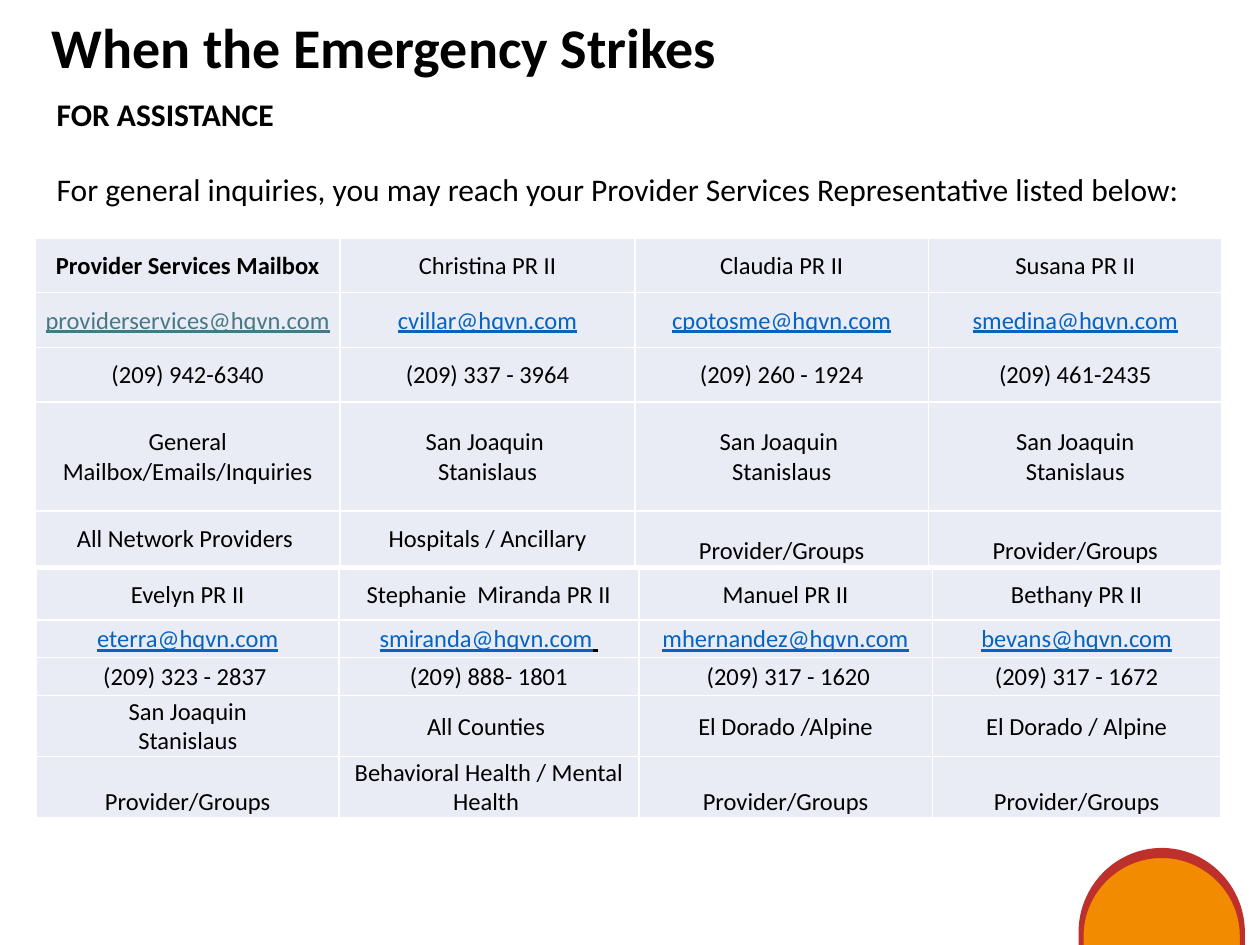
from lxml.etree import SubElement
from pptx import Presentation
from pptx.dml.color import RGBColor
from pptx.enum.text import MSO_ANCHOR, MSO_AUTO_SIZE, PP_ALIGN
from pptx.oxml.ns import qn
from pptx.util import Inches, Pt

BLACK, WHITE, CELL = "000000", "FFFFFF", "E9EBF5"
LINK, MAIL = "0563C1", "467886"

TOP = [
    ["Provider Services Mailbox", "Christina PR II", "Claudia PR II", "Susana PR II"],
    ["providerservices@hqvn.com", "cvillar@hqvn.com", "cpotosme@hqvn.com",
     "smedina@hqvn.com"],
    ["(209) 942-6340", "(209) 337 - 3964", "(209) 260 - 1924", "(209) 461-2435"],
    ["General Mailbox/Emails/Inquiries", "San Joaquin \nStanislaus",
     "San Joaquin \nStanislaus", "San Joaquin\nStanislaus"],
    ["All Network Providers ", "Hospitals / Ancillary", "Provider/Groups",
     "Provider/Groups"],
]
LOW = [
    ["Evelyn PR II", "Stephanie  Miranda PR II", "Manuel PR II", "Bethany PR II"],
    ["eterra@hqvn.com", "smiranda@hqvn.com ", "mhernandez@hqvn.com",
     "bevans@hqvn.com"],
    ["(209) 323 - 2837 ", "(209) 888- 1801", " (209) 317 - 1620", "(209) 317 - 1672"],
    ["San Joaquin\nStanislaus", "All Counties ", "El Dorado /Alpine",
     "El Dorado / Alpine"],
    ["Provider/Groups", "Behavioral Health / Mental Health ", "Provider/Groups",
     "Provider/Groups"],
]


def color(code):
    return RGBColor.from_string(code)


def add_run(para, text, size, bold=False, tint=BLACK, under=False):
    run = para.add_run()
    run.text = text
    font = run.font
    font.name, font.size = "Calibri", Pt(size)
    font.bold, font.underline = bold, under
    font.color.rgb = color(tint)


def set_box(holder, box, lines, size, space, after):
    holder.left, holder.top, holder.width, holder.height = map(Inches, box)
    frame = holder.text_frame
    frame.word_wrap = True
    frame.auto_size = MSO_AUTO_SIZE.NONE
    frame.vertical_anchor = MSO_ANCHOR.TOP
    for i, (text, bold) in enumerate(lines):
        para = frame.add_paragraph() if i else frame.paragraphs[0]
        props = para._p.get_or_add_pPr()
        props.set("marL", "0")
        props.set("indent", "0")
        SubElement(props, qn("a:buNone"))
        para.alignment = PP_ALIGN.LEFT
        para.line_spacing = space
        para.space_before = Pt(12 if i else 0)
        para.space_after = Pt(after)
        add_run(para, text, size, bold)


def add_edges(cell):
    props = cell._tc.get_or_add_tcPr()
    for side in ("a:lnL", "a:lnR", "a:lnT", "a:lnB"):
        line = SubElement(props, qn(side), w=str(Pt(1)))
        fill = SubElement(line, qn("a:solidFill"))
        SubElement(fill, qn("a:srgbClr"), val=WHITE)


def fill_cell(cell, text, bold, anchor):
    add_edges(cell)
    cell.fill.solid()
    cell.fill.fore_color.rgb = color(CELL)
    cell.margin_left = cell.margin_right = cell.margin_top = Inches(0.01)
    cell.margin_bottom = 0
    cell.vertical_anchor = anchor
    para = cell.text_frame.paragraphs[0]
    para.alignment = PP_ALIGN.CENTER
    if "@" in text:
        link, gap, _ = text.partition(" ")
        tint = MAIL if link.startswith("provider") else LINK
        add_run(para, link, 14, tint=tint, under=True)
        if gap:
            add_run(para, gap, 14, under=True)
        return
    for i, part in enumerate(text.split("\n")):
        if i:
            para.add_line_break()
        add_run(para, part, 14, bold)


def add_grid(slide, left, top, wide, high, data, drop):
    frame = slide.shapes.add_table(len(high), len(wide), Inches(left), Inches(top),
                                   Inches(sum(wide)), Inches(sum(high)))
    table = frame.table
    table.first_row = table.horz_banding = False
    for col, size in zip(table.columns, wide):
        col.width = Inches(size)
    for row, size in zip(table.rows, high):
        row.height = Inches(size)
    for r, texts in enumerate(data):
        for c, text in enumerate(texts):
            base = r == len(data) - 1 and c >= drop
            anchor = MSO_ANCHOR.BOTTOM if base else MSO_ANCHOR.MIDDLE
            fill_cell(table.cell(r, c), text, "Mailbox" in text and r == 0, anchor)


def dome(y, wide, high, way=1):
    x, bend = 9.22, 0.55
    run = wide * way
    return [
        [(x - run, 7.5)],
        [(x - run, y)],
        [(x - run, y - bend * high), (x - bend * run, y - high), (x, y - high)],
        [(x + bend * run, y - high), (x + run, y - bend * high), (x + run, y)],
        [(x + run, 7.5)],
    ]


def add_form(slide, steps, tint):
    ends = [(Inches(x), Inches(y)) for x, y in (step[-1] for step in steps)]
    form = slide.shapes.build_freeform(*ends[0], scale=1.0)
    form.add_line_segments(ends[1:], close=True)
    shape = form.convert_to_shape()
    lines = list(shape._element.iter(qn("a:lnTo")))
    for line, step in zip(lines, steps[1:]):
        if len(step) == 3:
            line.tag = qn("a:cubicBezTo")
            for i, (x, y) in enumerate(step[:2]):
                spot = SubElement(line, qn("a:pt"), x=str(Inches(x) - shape.left),
                                  y=str(Inches(y) - shape.top))
                line.insert(i, spot)
    shape.shadow.inherit = False
    shape.fill.solid()
    shape.fill.fore_color.rgb = color(tint)
    shape.line.fill.background()


def main():
    deck = Presentation()
    deck.slide_width, deck.slide_height = Inches(10), Inches(7.5)
    slide = deck.slides.add_slide(deck.slide_layouts[1])
    title, body = slide.placeholders
    add_form(slide, dome(7.43, 0.63, 0.63), "F28B00")
    add_form(slide, dome(7.4, 0.66, 0.67) + dome(7.43, 0.62, 0.62, -1), "BD302C")
    set_box(title, (0.31, 0.11, 9.26, 1.15),
            [("When the Emergency Strikes", True)], 32, 0.9, 0)
    set_box(body, (0.35, 0.68, 9.35, 6.33),
            [("FOR ASSISTANCE", True),
             ("For general inquiries, you may reach your Provider Services "
              "Representative listed below:", False)], 18, 1.07, 8)
    unit = 2.6 / 6
    add_grid(slide, 0.28, 1.89, [2.42, 2.34, 2.33, 2.33],
             [unit * n for n in (1, 1, 1, 2, 1)], TOP, 2)
    add_grid(slide, 0.29, 4.52, [2.4, 2.38, 2.33, 2.29],
             [0.4, 0.3, 0.3, 0.45, 0.45], LOW, 0)
    deck.save("out.pptx")


if __name__ == "__main__":
    main()
